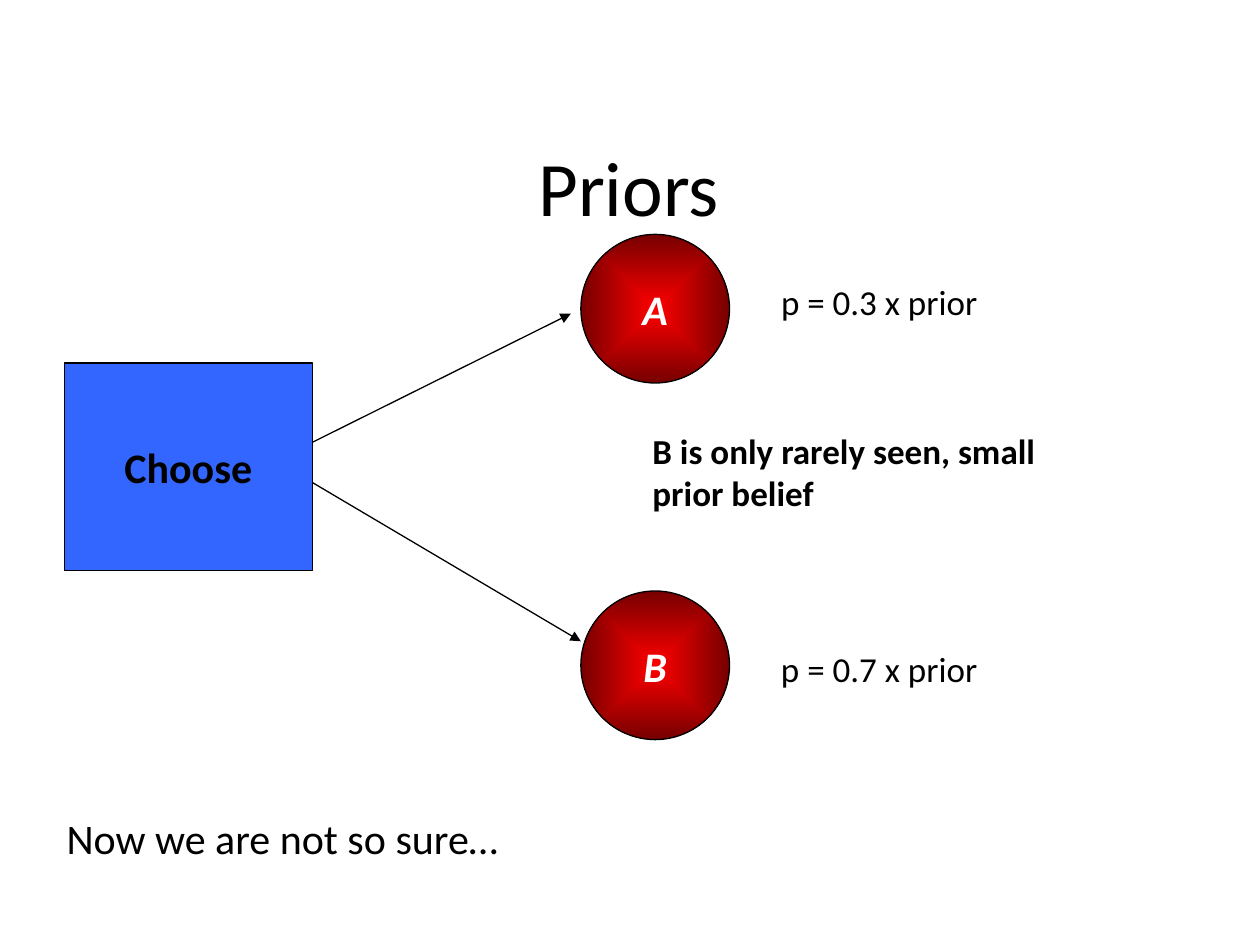
from dataclasses import dataclass

from lxml.etree import SubElement
from pptx import Presentation
from pptx.dml.color import RGBColor as Color
from pptx.enum.shapes import MSO_CONNECTOR as Connector, MSO_SHAPE as Preset
from pptx.enum.text import MSO_ANCHOR as Anchor, MSO_AUTO_SIZE as AutoSize, PP_ALIGN as Align
from pptx.oxml.ns import qn
from pptx.shapes.autoshape import Shape
from pptx.slide import Slide
from pptx.util import Inches, Pt


@dataclass(frozen=True)
class Theme:
    font: str = "Calibri"
    ink: Color = Color(0x00, 0x00, 0x00)
    light: Color = Color(0xFF, 0xFF, 0xFF)
    choice: Color = Color(0x33, 0x66, 0xFF)
    glow: Color = Color(0xFF, 0x00, 0x00)
    rim: Color = Color(0x76, 0x00, 0x00)
    title: int = 44
    large: int = 24
    body: int = 20
    stroke: float = 0.75


THEME = Theme()


@dataclass(frozen=True)
class Box:
    left: float
    top: float
    width: float
    height: float

    def lengths(self) -> tuple:
        return tuple(map(Inches, (self.left, self.top, self.width, self.height)))


@dataclass(frozen=True)
class Label:
    text: str
    box: Box
    size: int = THEME.body
    bold: bool = False
    align: Align = Align.LEFT
    anchor: Anchor = Anchor.TOP


@dataclass(frozen=True)
class Outcome:
    name: str
    top: float
    arrow_start: tuple[float, float]
    arrow_end: tuple[float, float]


CHOICE_BOX = Box(0.51, 2.88, 1.97, 1.65)
OUTCOME_LEFT, OUTCOME_SIZE = 4.61, 1.18
OUTCOMES = (
    Outcome("A", 1.86, (2.48, 3.51), (4.53, 2.49)),
    Outcome("B", 4.69, (2.48, 3.83), (4.61, 5.09)),
)
LABELS = (
    Label("Priors", Box(0.35, 0.76, 9.28, 1.42), THEME.title,
          align=Align.CENTER, anchor=Anchor.MIDDLE),
    Label("p = 0.3 x prior", Box(6.1, 2.18, 3.39, 0.43)),
    Label("p = 0.7 x prior", Box(6.1, 5.09, 2.6, 0.43)),
    Label("B is only rarely seen, small prior belief", Box(5.08, 3.36, 3.78, 0.77), bold=True),
    Label("Now we are not so sure…", Box(0.43, 6.4, 7.88, 0.5), THEME.large),
)


def write_text(shape: Shape, text: str, size: int, color: Color, align: Align,
               anchor: Anchor, bold: bool = False, italic: bool = False) -> None:
    shape.text_frame.vertical_anchor = anchor
    paragraph = shape.text_frame.paragraphs[0]
    paragraph.text = text
    paragraph.alignment = align
    font = paragraph.font
    font.name, font.size = THEME.font, Pt(size)
    font.bold, font.italic = bold, italic
    font.color.rgb = color


def draw_label(slide: Slide, label: Label) -> None:
    shape = slide.shapes.add_textbox(*label.box.lengths())
    shape.text_frame.word_wrap = True
    if label.anchor == Anchor.TOP:
        shape.text_frame.auto_size = AutoSize.SHAPE_TO_FIT_TEXT
    write_text(shape, label.text, label.size, THEME.ink, label.align, label.anchor, label.bold)


def draw_node(slide: Slide, preset: Preset, box: Box, text: str,
              color: Color, italic: bool = False) -> Shape:
    shape = slide.shapes.add_shape(preset, *box.lengths())
    shape.shadow.inherit = False
    shape.line.color.rgb = THEME.ink
    shape.line.width = Pt(THEME.stroke)
    shape.text_frame.word_wrap = False
    write_text(shape, text, THEME.large, color, Align.CENTER, Anchor.MIDDLE, True, italic)
    return shape


def fill_from_center(shape: Shape, center: Color, edge: Color) -> None:
    shape.fill.gradient()
    for stop, color in zip(shape.fill.gradient_stops, (center, edge)):
        stop.color.rgb = color
    gradient = shape._element.spPr.find(qn("a:gradFill"))
    gradient.remove(gradient.find(qn("a:lin")))
    path = SubElement(gradient, qn("a:path"), {"path": "shape"})
    SubElement(path, qn("a:fillToRect"), dict.fromkeys("ltrb", "50000"))


def draw_arrow(slide: Slide, outcome: Outcome) -> None:
    ends = map(Inches, outcome.arrow_start + outcome.arrow_end)
    arrow = slide.shapes.add_connector(Connector.STRAIGHT, *ends)
    arrow.line.color.rgb = THEME.ink
    arrow.line.width = Pt(THEME.stroke)
    SubElement(arrow.line._get_or_add_ln(), qn("a:tailEnd"), {"type": "triangle"})
    SubElement(arrow._element.spPr, qn("a:effectLst"))


def draw_outcome(slide: Slide, outcome: Outcome) -> None:
    draw_arrow(slide, outcome)
    box = Box(OUTCOME_LEFT, outcome.top, OUTCOME_SIZE, OUTCOME_SIZE)
    circle = draw_node(slide, Preset.OVAL, box, outcome.name, THEME.light, italic=True)
    fill_from_center(circle, THEME.glow, THEME.rim)


def main() -> None:
    presentation = Presentation()
    presentation.slide_width, presentation.slide_height = Inches(10), Inches(7.5)
    slide = presentation.slides.add_slide(presentation.slide_layouts[6])
    for outcome in OUTCOMES:
        draw_outcome(slide, outcome)
    choice = draw_node(slide, Preset.RECTANGLE, CHOICE_BOX, "Choose", THEME.ink)
    choice.fill.solid()
    choice.fill.fore_color.rgb = THEME.choice
    for label in LABELS:
        draw_label(slide, label)
    presentation.save("out.pptx")


if __name__ == "__main__":
    main()
